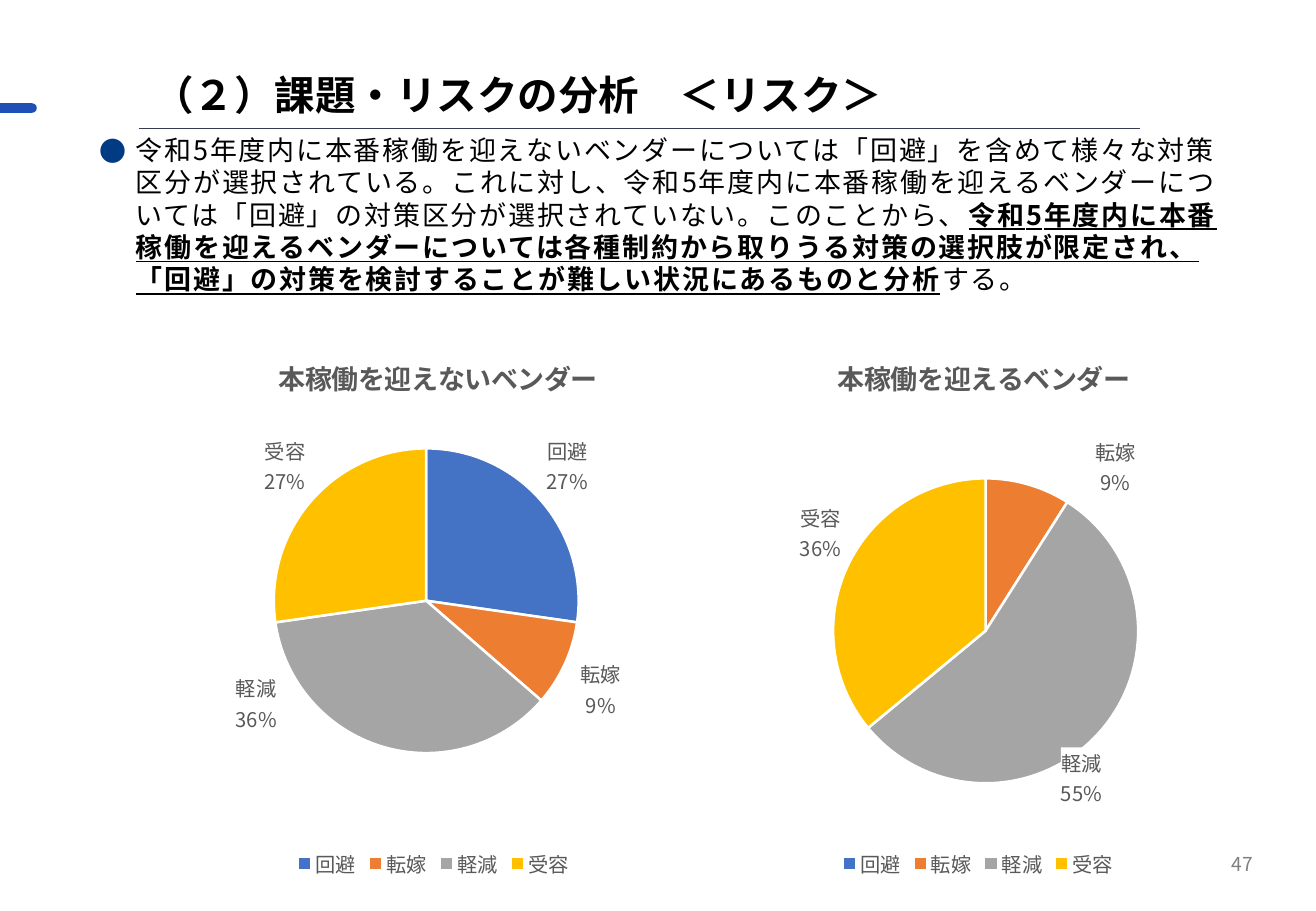
import copy

import pptx
import pptx.chart.data
import pptx.dml.color
import pptx.enum.chart
import pptx.enum.shapes
import pptx.enum.text
import pptx.oxml
import pptx.oxml.ns
import pptx.util

Cm, Pt, qn = pptx.util.Cm, pptx.util.Pt, pptx.oxml.ns.qn
FONT = "Noto Sans CJK JP"
CATEGORIES = ["回避", "転嫁", "軽減", "受容"]
SLICE_COLORS = ["4472C4", "ED7D31", "A5A5A5", "FFC000"]
CHART_TOP, CHART_HEIGHT = 6.81, 11.66
PIE_SIZE = 6.38


def rgb(color):
    """Return the colour for a hex string."""
    return pptx.dml.color.RGBColor.from_string(color)


def xml(tag, body="", attrs=""):
    """Build an element in the drawing or chart namespace."""
    ns = pptx.oxml.ns.nsdecls("a", "c")
    return pptx.oxml.parse_xml(f"<{tag} {ns} {attrs}>{body}</{tag}>")


def set_font(font, size, color, bold=False):
    """Set size, colour, weight and typeface."""
    font.size, font.bold, font.name = Pt(size), bold, FONT
    font.fill.solid()
    font.fill.fore_color.rgb = rgb(color)
    font._element.append(xml("a:ea", attrs=f'typeface="{FONT}"'))


def add_text(s, box, margin=0, anchor="TOP"):
    """Add a wrapping text box and return its first paragraph."""
    tf = s.shapes.add_textbox(*map(Cm, box)).text_frame
    tf.word_wrap = True
    tf.vertical_anchor = getattr(pptx.enum.text.MSO_ANCHOR, anchor)
    tf.margin_left = tf.margin_right = Cm(margin)
    tf.margin_top = tf.margin_bottom = Cm(margin / 2)
    return tf.paragraphs[0]


def add_run(p, text, size, color="000000", bold=False):
    """Add a formatted run."""
    r = p.add_run()
    r.text = text
    set_font(r.font, size, color, bold)
    return r


def add_bar(s, box, color):
    """Add the rounded accent bar."""
    sp = s.shapes.add_shape(pptx.enum.shapes.MSO_SHAPE.ROUNDED_RECTANGLE, *map(Cm, box))
    sp.adjustments[0] = 0.5
    sp.shadow.inherit = False
    sp.fill.solid()
    sp.fill.fore_color.rgb = rgb(color)
    sp.line.fill.background()


def add_rule(s, x1, x2, y, color):
    """Add the thin rule under the title."""
    line = s.shapes.add_connector(
        pptx.enum.shapes.MSO_CONNECTOR.STRAIGHT, Cm(x1), Cm(y), Cm(x2), Cm(y))
    line.line.color.rgb = rgb(color)
    line.line.width = Pt(0.5)
    line._element.spPr.append(xml("a:effectLst"))


def add_bullet(p, indent, color):
    """Give the paragraph a hanging round bullet."""
    pPr = p._p.get_or_add_pPr()
    pPr.set("marL", str(Cm(indent)))
    pPr.set("indent", str(-Cm(indent)))
    pPr.append(xml("a:buClr", f'<a:srgbClr val="{color}"/>'))
    pPr.append(xml("a:buFont", attrs=f'typeface="{FONT}"'))
    pPr.append(xml("a:buChar", attrs='char="●"'))


def layout(modes="", **values):
    """Build a manual chart layout from fractions."""
    body = modes + "".join(f'<c:{k} val="{v:.3f}"/>' for k, v in values.items())
    return xml("c:layout", f"<c:manualLayout>{body}</c:manualLayout>")


def place(parent, index, element):
    """Put a layout into a chart part, replacing any old one."""
    for old in parent.findall(qn("c:layout")):
        parent.remove(old)
    parent.insert(index, element)


def add_label(labels, index, idx, offset, fill):
    """Move one slice label, or delete it when there is no offset."""
    label = xml("c:dLbl", f'<c:idx val="{idx}"/>')
    if offset is None:
        label.append(xml("c:delete", attrs='val="1"'))
    else:
        label.append(layout(x=offset[0], y=offset[1]))
        if fill:
            label.append(xml("c:spPr", f'<a:solidFill><a:srgbClr val="{fill}"/></a:solidFill>'))
        for child in labels:
            if child.tag != qn("c:dLbl") and child.tag != qn("c:showLeaderLines"):
                label.append(copy.deepcopy(child))
    labels.insert(index, label)


def add_pie(s, left, width, title, values, pie_left, pie_top, offsets, fills):
    """Add a titled pie chart with outside labels and a legend."""
    data = pptx.chart.data.CategoryChartData()
    data.categories = CATEGORIES
    data.add_series("構成比", values)
    chart = s.shapes.add_chart(
        pptx.enum.chart.XL_CHART_TYPE.PIE, Cm(left), Cm(CHART_TOP),
        Cm(width), Cm(CHART_HEIGHT), data).chart
    set_font(chart.font, 10, "000000")
    chart.has_title = True
    add_run(chart.chart_title.text_frame.paragraphs[0], title, 16, "595959", True)
    edges = '<c:xMode val="edge"/><c:yMode val="edge"/>'
    x = pie_left / width
    place(chart.chart_title._element, 1, layout(edges, x=x, y=0.045))
    place(chart._chartSpace.chart.plotArea, 0, layout(
        '<c:layoutTarget val="inner"/>' + edges, x=x, y=pie_top / CHART_HEIGHT,
        w=PIE_SIZE / width, h=PIE_SIZE / CHART_HEIGHT))
    chart.has_legend = True
    chart.legend.position = pptx.enum.chart.XL_LEGEND_POSITION.BOTTOM
    chart.legend.include_in_layout = False
    set_font(chart.legend.font, 12, "595959")
    plot = chart.plots[0]
    plot.vary_by_categories = True
    series = plot.series[0]
    for i, color in enumerate(SLICE_COLORS):
        fmt = series.points[i].format
        fmt.fill.solid()
        fmt.fill.fore_color.rgb = rgb(color)
        fmt.line.color.rgb = rgb("FFFFFF")
        fmt.line.width = Pt(1.5)
    dl = series.data_labels
    dl.show_value, dl.show_percentage, dl.show_category_name = False, True, True
    dl.position = pptx.enum.chart.XL_LABEL_POSITION.OUTSIDE_END
    set_font(dl.font, 12, "595959")
    labels = dl._element
    for lines in labels.findall(qn("c:showLeaderLines")):
        labels.remove(lines)
    labels.append(xml("c:separator", "\n"))
    labels.append(xml("c:showLeaderLines", attrs='val="0"'))
    for index, (idx, offset) in enumerate(offsets.items()):
        add_label(labels, index, idx, offset, fills.get(idx))


def main():
    """Build the risk analysis slide."""
    prs = pptx.Presentation()
    prs.slide_width, prs.slide_height = Cm(27.51), Cm(19.05)
    s = prs.slides.add_slide(prs.slide_layouts[6])
    add_bar(s, (-0.2, 2.16, 0.97, 0.2), "1E50B5")
    p = add_text(s, (3.2, 1.4, 21.64, 1.14), anchor="MIDDLE")
    add_run(p, "（２）課題・リスクの分析\u3000＜リスク＞".replace("\u3000", "　"), 24, bold=True)
    add_rule(s, 2.9, 23.83, 2.69, "333F50")
    p = add_text(s, (20.24, 17.55, 6.2, 1.02), 0.25, "MIDDLE")
    p.alignment = pptx.enum.text.PP_ALIGN.RIGHT
    add_run(p, "47", 11.4, "808080")

    p = add_text(s, (2.08, 2.79, 23.47, 4.01))
    p.line_spacing, p.space_after = 1.0, Pt(5)
    add_bullet(p, 0.76, "003B83")
    for text, strong in (
        ("令和5年度内に本番稼働を迎えないベンダーについては「回避」を含めて様々な対策区分が選択されている。"
         "これに対し、令和5年度内に本番稼働を迎えるベンダーについては「回避」の対策区分が選択されていない。"
         "このことから、", False),
        ("令和5年度内に本番稼働を迎えるベンダーについては各種制約から取りうる対策の選択肢が限定され、"
         "「回避」の対策を検討することが難しい状況にあるものと分析", True),
        ("する。", False),
    ):
        r = add_run(p, text, 16, bold=strong)
        r.font.underline = strong
        r.font._element.set("spc", "110")

    add_pie(s, 14.25, 12.4, "本稼働を迎えるベンダー", (0, 9, 55, 36), 3.16, 3.19,
            {0: None, 1: (0.11, 0.035), 2: (-0.075, 0.02)}, {2: "FFFFFF"})
    add_pie(s, 2.64, 12.85, "本稼働を迎えないベンダー", (27, 9, 36, 27), 3.09, 2.56,
            {1: (0.015, -0.015), 2: (-0.17, -0.145)}, {})
    prs.save("out.pptx")


if __name__ == "__main__":
    main()
